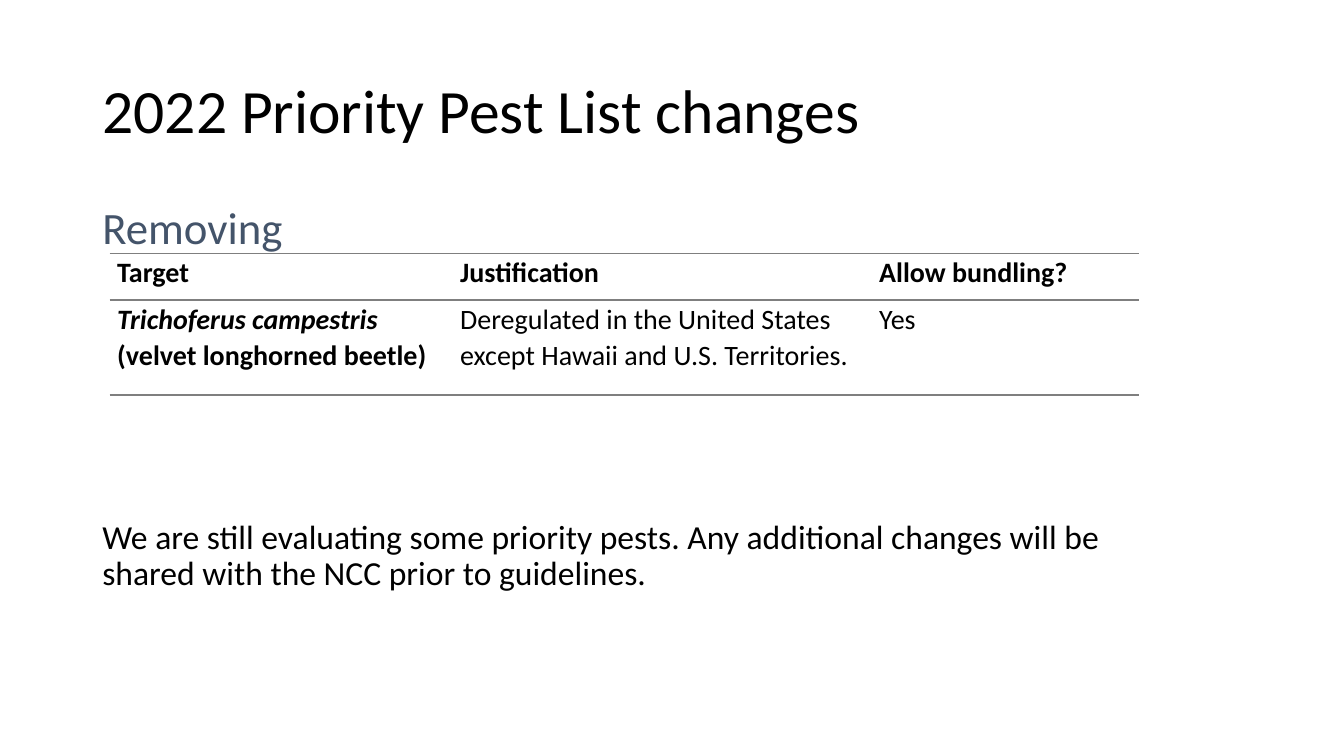
from dataclasses import dataclass

from lxml import etree
from pptx import Presentation
from pptx.dml.color import RGBColor
from pptx.enum import text
from pptx.oxml import ns
from pptx.util import Pt


@dataclass(frozen=True)
class Theme:
    font: str = "Calibri"
    ink: str = "000000"
    accent: str = "44546A"
    rule: str = "7F7F7F"
    title: int = 44
    heading: int = 32
    body: int = 24
    cell: int = 20


THEME = Theme()
HEADER = ["Target", "Justification", "Allow bundling?"]
REMOVED = [
    ["Trichoferus campestris ", "(velvet longhorned beetle)"],
    "Deregulated in the United States except Hawaii and U.S. Territories.",
    "Yes",
]
NOTE = ("We are still evaluating some priority pests. Any additional changes "
        "will be shared with the NCC prior to guidelines.")


def add_run(p, words, size, color=THEME.ink, bold=False, italic=False):
    r = p.add_run()
    r.text = words
    f = r.font
    f.name, f.size, f.bold, f.italic = THEME.font, Pt(size), bold, italic
    f.color.rgb = RGBColor.from_string(color)


def place(sp, box):
    sp.left, sp.top, sp.width, sp.height = (Pt(v) for v in box)


def set_borders(cell):
    """Rule the top and bottom of a cell and leave its sides open."""
    tcPr = cell._tc.get_or_add_tcPr()
    for side in "LRTB":
        ln = etree.SubElement(tcPr, ns.qn(f"a:ln{side}"), w=str(Pt(1)))
        if side in "LR":
            etree.SubElement(ln, ns.qn("a:noFill"))
        else:
            fill = etree.SubElement(ln, ns.qn("a:solidFill"))
            etree.SubElement(fill, ns.qn("a:srgbClr"), val=THEME.rule)


def add_title(s, box, words):
    sp = s.shapes.title
    place(sp, box)
    tf = sp.text_frame
    tf.vertical_anchor = text.MSO_ANCHOR.MIDDLE
    p = tf.paragraphs[0]
    p.alignment = text.PP_ALIGN.LEFT
    p.line_spacing = 0.9
    add_run(p, words, THEME.title)


def add_body(s, box, heading, note, gap):
    tf = s.shapes.add_textbox(*(Pt(v) for v in box)).text_frame
    tf.word_wrap = True
    p = tf.paragraphs[0]
    p.line_spacing, p.space_before = 0.9, Pt(10)
    add_run(p, heading, THEME.heading, THEME.accent)
    p = tf.add_paragraph()
    p.line_spacing, p.space_before = 0.9, Pt(gap)
    add_run(p, note, THEME.body)


def add_pest_table(s, box, rows, widths, heights):
    frame = s.shapes.add_table(len(rows), len(widths), *(Pt(v) for v in box))
    table = frame.table
    table.first_row = table.horz_banding = False
    for col, width in zip(table.columns, widths):
        col.width = Pt(width)
    for row, height in zip(table.rows, heights):
        row.height = Pt(height)
    for i, row in enumerate(rows):
        for j, content in enumerate(row):
            cell = table.cell(i, j)
            cell.margin_left = cell.margin_right = Pt(5.4)
            cell.margin_top = cell.margin_bottom = 0
            set_borders(cell)
            cell.fill.background()
            p = cell.text_frame.paragraphs[0]
            p.line_spacing = 1.07
            # A pair is a scientific name followed by its common name
            pair = isinstance(content, list)
            for k, words in enumerate(content if pair else [content]):
                add_run(p, words, THEME.cell, bold=i == 0 or j == 0,
                        italic=pair and k == 0)


def main():
    prs = Presentation()
    prs.slide_width, prs.slide_height = Pt(960), Pt(540)
    s = prs.slides.add_slide(prs.slide_layouts[5])

    # Title
    add_title(s, (66, 28.75, 828, 104.4), "2022 Priority Pest List changes")
    # Heading and closing note, with room for the table between them
    add_body(s, (66, 143.75, 795.6, 342.6), "Removing", NOTE, gap=190)
    # Removed pests
    add_pest_table(s, (78.3, 181.3, 735, 100.8), [HEADER, REMOVED],
                   widths=(245, 299.3, 190.7), heights=(33, 67.8))

    prs.save("out.pptx")


if __name__ == "__main__":
    main()
